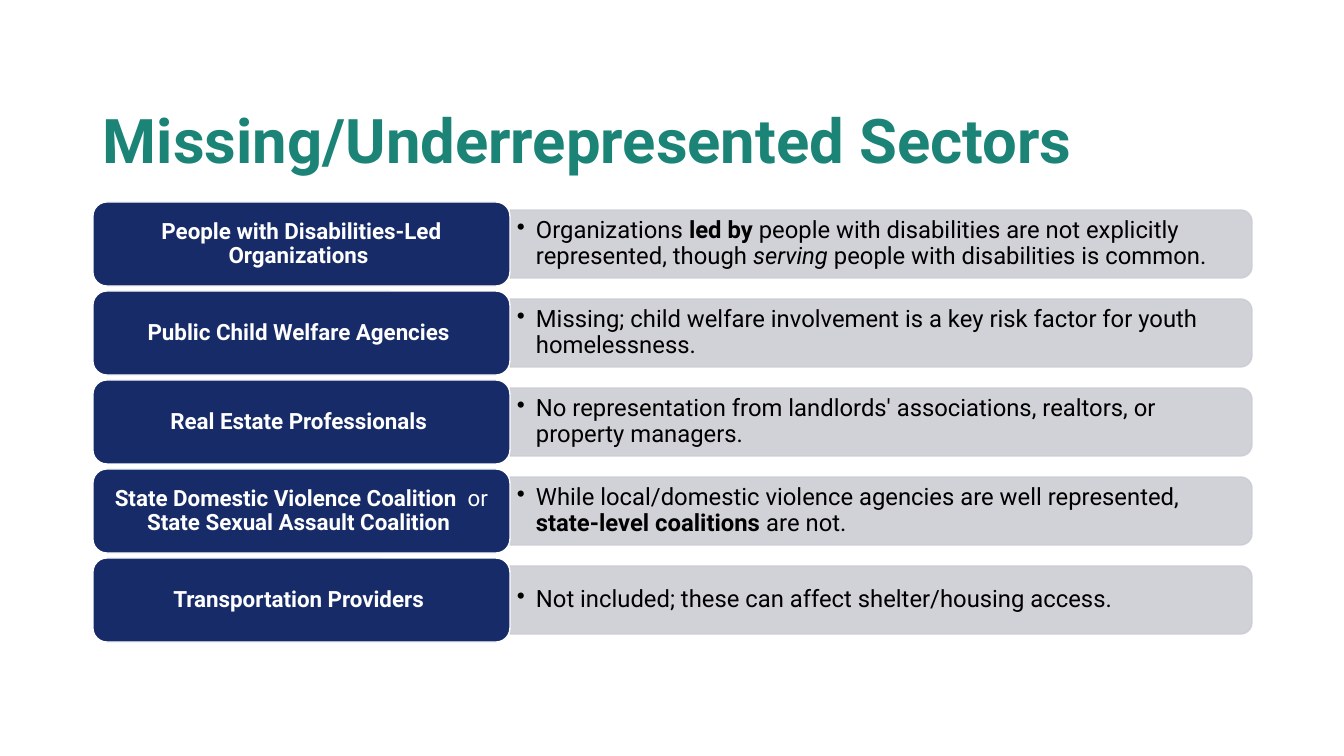
import pptx
import pptx.dml.color
import pptx.enum.shapes
import pptx.enum.text
import pptx.oxml.ns
import pptx.util
from lxml import etree

SLIDE_WIDTH, SLIDE_HEIGHT = 1344, 756
EMU_PER_PX = 12192000 / SLIDE_WIDTH

TEAL, NAVY, GREY, WHITE, BLACK = "1B8477", "172B69", "CCCDD4", "FFFFFF", "000000"
LEFT, LABEL_WIDTH, LABEL_HEIGHT = 93, 417, 84
BAR_WIDTH, BAR_HEIGHT = 742, 68
FIRST_ROW_TOP, ROW_PITCH = 202, 89
BULLET_INDENT = 19

TITLE_STYLE = {"size": pptx.util.Pt(44), "bold": True}
LABEL_STYLE = {"size": pptx.util.Pt(16), "bold": True}
FINDING_STYLE = {"size": pptx.util.Pt(17)}
BOLD, REGULAR, ITALIC = {"bold": True}, {"bold": False}, {"italic": True}

# Each sector: label runs, finding runs; a run is its text and its own style.
SECTORS = [
    ([("People with Disabilities-Led Organizations ", {})],
     [("Organizations ", {}), ("led by", BOLD),
      (" people with disabilities are not explicitly represented, though ", {}),
      ("serving", ITALIC), (" people with disabilities is common. ", {})]),
    ([("Public Child Welfare Agencies ", {})],
     [("Missing; child welfare involvement is a key risk factor for youth homelessness. ", {})]),
    ([("Real Estate Professionals ", {})],
     [("No representation from landlords' associations, realtors, or property managers. ", {})]),
    ([("State Domestic Violence Coalition", {}), ("  or ", REGULAR),
      ("State Sexual Assault Coalition ", {})],
     [("While local/domestic violence agencies are well represented, ", {}),
      ("state-level coalitions", BOLD), (" are not. ", {})]),
    ([("Transportation Providers ", {})],
     [("Not included; these can affect shelter/housing access.", {})]),
]


def px(length):
    return pptx.util.Emu(round(length * EMU_PER_PX))


def rgb(color):
    return pptx.dml.color.RGBColor.from_string(color)


def write_runs(frame, runs, style, color, align, margins):
    """Fill the frame's only paragraph with runs and return the paragraph."""
    margin_x, margin_y = margins
    settings = {
        "word_wrap": True,
        "auto_size": pptx.enum.text.MSO_AUTO_SIZE.NONE,
        "vertical_anchor": pptx.enum.text.MSO_ANCHOR.MIDDLE,
        "margin_left": px(margin_x), "margin_right": px(margin_x),
        "margin_top": px(margin_y), "margin_bottom": px(margin_y),
    }
    for name, value in settings.items():
        setattr(frame, name, value)
    paragraph = frame.paragraphs[0]
    paragraph.alignment = align
    paragraph.line_spacing = 0.9
    for text, own_style in runs:
        run = paragraph.add_run()
        run.text = text
        for name, value in {"name": "Roboto", **style, **own_style}.items():
            setattr(run.font, name, value)
        run.font.color.rgb = rgb(color)
    return paragraph


def add_bullet(paragraph):
    properties = paragraph._p.get_or_add_pPr()
    properties.set("marL", str(px(BULLET_INDENT)))
    properties.set("indent", str(-px(BULLET_INDENT)))
    bullet = etree.SubElement(properties, pptx.oxml.ns.qn("a:buChar"))
    bullet.set("char", "•")


def add_panel(slide, kind, box, fill, line):
    panel = slide.shapes.add_shape(kind, *map(px, box))
    panel.shadow.inherit = False
    panel.fill.solid()
    panel.fill.fore_color.rgb = rgb(fill)
    panel.line.color.rgb = rgb(line)
    panel.line.width = pptx.util.Pt(1)
    return panel


def make_translucent(panel, percent):
    """Set the opacity of the panel's fill and line."""
    for color in panel._element.spPr.iter(pptx.oxml.ns.qn("a:srgbClr")):
        alpha = etree.SubElement(color, pptx.oxml.ns.qn("a:alpha"))
        alpha.set("val", str(percent * 1000))


def add_title(slide, text):
    title = slide.shapes.title
    title.left, title.top, title.width, title.height = map(px, (LEFT, 101, 1159, 86))
    write_runs(title.text_frame, [(text, {})], TITLE_STYLE, TEAL,
               pptx.enum.text.PP_ALIGN.LEFT, (10, 5))


def add_finding(slide, runs, middle):
    left = LEFT + LABEL_WIDTH
    # The bar is an upright shape turned so that its rounded end points right.
    bar_box = (left + (BAR_WIDTH - BAR_HEIGHT) / 2, middle - BAR_WIDTH / 2,
               BAR_HEIGHT, BAR_WIDTH)
    bar = add_panel(slide, pptx.enum.shapes.MSO_SHAPE.ROUND_2_SAME_RECTANGLE,
                    bar_box, GREY, GREY)
    bar.rotation = 90
    make_translucent(bar, 90)
    finding = slide.shapes.add_textbox(*map(px, (left, middle - 31, BAR_WIDTH - 3, 62)))
    paragraph = write_runs(finding.text_frame, runs, FINDING_STYLE, BLACK,
                           pptx.enum.text.PP_ALIGN.LEFT, (7, 4))
    add_bullet(paragraph)


def add_label(slide, runs, top):
    label = add_panel(slide, pptx.enum.shapes.MSO_SHAPE.ROUNDED_RECTANGLE,
                      (LEFT, top, LABEL_WIDTH, LABEL_HEIGHT), NAVY, WHITE)
    write_runs(label.text_frame, runs, LABEL_STYLE, WHITE,
               pptx.enum.text.PP_ALIGN.CENTER, (7, 3))


def main():
    presentation = pptx.Presentation()
    presentation.slide_width = px(SLIDE_WIDTH)
    presentation.slide_height = px(SLIDE_HEIGHT)
    slide = presentation.slides.add_slide(
        presentation.slide_layouts.get_by_name("Title Only"))
    add_title(slide, "Missing/Underrepresented Sectors")
    for row, (label, finding) in enumerate(SECTORS):
        top = FIRST_ROW_TOP + row * ROW_PITCH
        add_finding(slide, finding, top + LABEL_HEIGHT / 2)
        add_label(slide, label, top)
    presentation.save("out.pptx")


if __name__ == "__main__":
    main()
